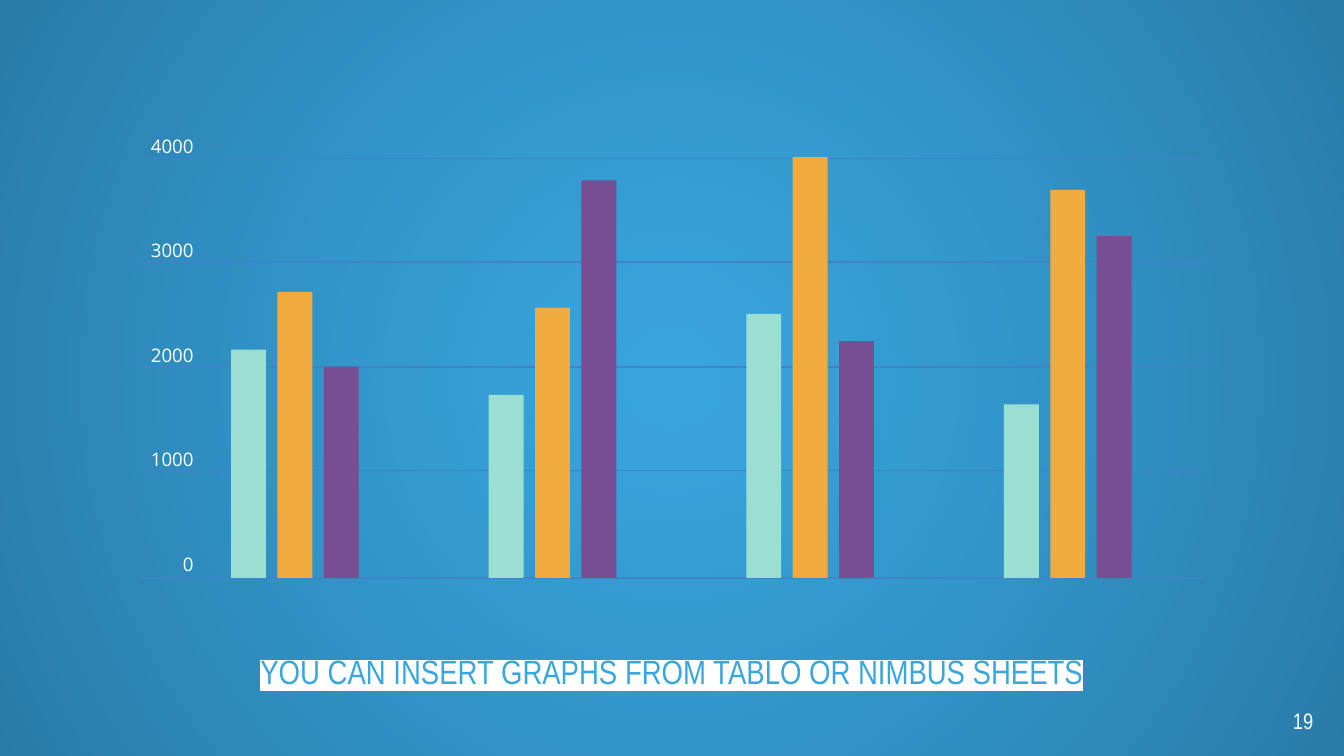
from dataclasses import dataclass

from lxml import etree
from pptx import Presentation
from pptx import util as u
from pptx.dml.color import RGBColor
from pptx.enum import shapes, text
from pptx.oxml import parse_xml
from pptx.oxml.ns import nsdecls, qn


@dataclass(frozen=True)
class Theme:
    background: str = "39A6DE"
    shade_inner: str = "073763"
    shade_outer: str = "010B15"
    white: str = "FFFFFF"
    grid: str = "3D85C6"
    series: tuple[str, ...] = ("9BDED2", "F1AA3E", "774E92")
    heading_font: str = "Arial Narrow"
    axis_font: str = "Open Sans"
    caption_size: int = 18
    number_size: int = 12
    axis_size: int = 10


@dataclass(frozen=True)
class Plot:
    left: float = 1.04
    right: float = 8.96
    base: float = 4.3
    height: float = 3.13
    maximum: int = 4000
    first_bar: float = 1.72
    group_pitch: float = 5.75 / 3
    bar_pitch: float = 0.69 / 2
    bar_width: float = 0.26
    grid_lines: tuple[float, ...] = (1.18, 1.95, 2.73, 3.5, 4.3)


@dataclass(frozen=True)
class Group:
    values: tuple[int, ...]


THEME = Theme()
PLOT = Plot()
PAGE_WIDTH = 10
PAGE_HEIGHT = PAGE_WIDTH * 9 / 16
GROUPS = (
    Group((2170, 2720, 2010)),
    Group((1740, 2570, 3780)),
    Group((2510, 4000, 2250)),
    Group((1650, 3690, 3250)),
)


def rgb(value: str) -> RGBColor:
    return RGBColor.from_string(value)


def set_font(font, name: str, size: float, color: str) -> None:
    font.name = name
    font.size = u.Pt(size)
    font.color.rgb = rgb(color)


def set_frame(box, margin: float):
    """Give a text holder equal margins, wrapping and top alignment."""
    frame = box.text_frame
    frame.margin_left = frame.margin_right = u.Inches(margin)
    frame.margin_top = frame.margin_bottom = u.Inches(margin)
    frame.word_wrap = True
    frame.auto_size = text.MSO_AUTO_SIZE.NONE
    frame.vertical_anchor = text.MSO_ANCHOR.TOP
    return frame


def add_rectangle(page, left: float, top: float, width: float, height: float, color: str):
    box = page.shapes.add_shape(
        shapes.MSO_SHAPE.RECTANGLE,
        u.Inches(left), u.Inches(top), u.Inches(width), u.Inches(height),
    )
    box.shadow.inherit = False
    box.fill.solid()
    box.fill.fore_color.rgb = rgb(color)
    box.line.fill.background()
    return box


def add_vignette(page) -> None:
    """Darken the page towards its corners with a radial gradient."""
    box = add_rectangle(page, 0, 0, PAGE_WIDTH, PAGE_HEIGHT, THEME.shade_inner)
    properties = box._element.spPr
    gradient = parse_xml(
        f'<a:gradFill {nsdecls("a")} rotWithShape="1"><a:gsLst>'
        f'<a:gs pos="0"><a:srgbClr val="{THEME.shade_inner}"><a:alpha val="0"/></a:srgbClr></a:gs>'
        f'<a:gs pos="100000"><a:srgbClr val="{THEME.shade_outer}"><a:alpha val="28000"/></a:srgbClr></a:gs>'
        '</a:gsLst><a:path path="circle">'
        '<a:fillToRect l="50000" t="50000" r="50000" b="50000"/></a:path></a:gradFill>'
    )
    properties.replace(properties.find(qn("a:solidFill")), gradient)
    # Send behind the caption placeholder
    page.shapes._spTree.insert(2, box._element)


def fill_caption(page, wording: str) -> None:
    box = page.shapes.title
    box.left, box.top = u.Inches(0.5), u.Inches(4.74)
    box.width, box.height = u.Inches(9), u.Inches(0.57)
    para = set_frame(box, 0.1).paragraphs[0]
    para.alignment = text.PP_ALIGN.CENTER
    para.space_before = u.Pt(3.6)
    span = para.add_run()
    span.text = wording
    set_font(span.font, THEME.heading_font, THEME.caption_size, THEME.background)
    # The highlight follows the text colour in the run properties
    highlight = etree.Element(qn("a:highlight"))
    etree.SubElement(highlight, qn("a:srgbClr"), val=THEME.white)
    span._r.rPr.find(qn("a:solidFill")).addnext(highlight)


def add_right_text(page, left: float, top: float, width: float, height: float,
                   lines: list[str], font: str, size: float,
                   margin: float = 0, gap: float = 0) -> None:
    box = page.shapes.add_textbox(
        u.Inches(left), u.Inches(top), u.Inches(width), u.Inches(height))
    frame = set_frame(box, margin)
    for index, line in enumerate(lines):
        para = frame.add_paragraph() if index else frame.paragraphs[0]
        para.text = line
        para.alignment = text.PP_ALIGN.RIGHT
        para.space_before = u.Pt(gap if index else 0)
        set_font(para.font, font, size, THEME.white)


def add_grid_line(page, y: float) -> None:
    line = page.shapes.add_connector(
        shapes.MSO_CONNECTOR.STRAIGHT,
        u.Inches(PLOT.left), u.Inches(y), u.Inches(PLOT.right), u.Inches(y))
    line.line.color.rgb = rgb(THEME.grid)
    line.line.width = u.Pt(0.75)
    etree.SubElement(line._element.spPr, qn("a:effectLst"))


def add_bars(page, position: int, group: Group) -> None:
    start = PLOT.first_bar + position * PLOT.group_pitch
    for index, (value, color) in enumerate(zip(group.values, THEME.series)):
        height = PLOT.height * value / PLOT.maximum
        add_rectangle(page, start + index * PLOT.bar_pitch, PLOT.base - height,
                      PLOT.bar_width, height, color)


def main() -> None:
    deck = Presentation()
    deck.slide_width, deck.slide_height = u.Inches(PAGE_WIDTH), u.Inches(PAGE_HEIGHT)
    page = deck.slides.add_slide(deck.slide_layouts[5])

    # Background
    page.background.fill.solid()
    page.background.fill.fore_color.rgb = rgb(THEME.background)
    add_vignette(page)

    # Caption and page number
    fill_caption(page, "YOU CAN INSERT GRAPHS FROM TABLO OR NIMBUS SHEETS")
    add_right_text(page, 9.27, 5.16, 0.6, 0.38, ["19"],
                   THEME.heading_font, THEME.number_size, margin=0.1)

    # Grid and axis labels
    for y in PLOT.grid_lines:
        add_grid_line(page, y)
    ticks = [str(value) for value in range(PLOT.maximum, -1, -1000)]
    add_right_text(page, PLOT.left, 1, 0.4, 3.31, ticks,
                   THEME.axis_font, THEME.axis_size, gap=44)

    # Bars
    for position, group in enumerate(GROUPS):
        add_bars(page, position, group)

    deck.save("out.pptx")


if __name__ == "__main__":
    main()
